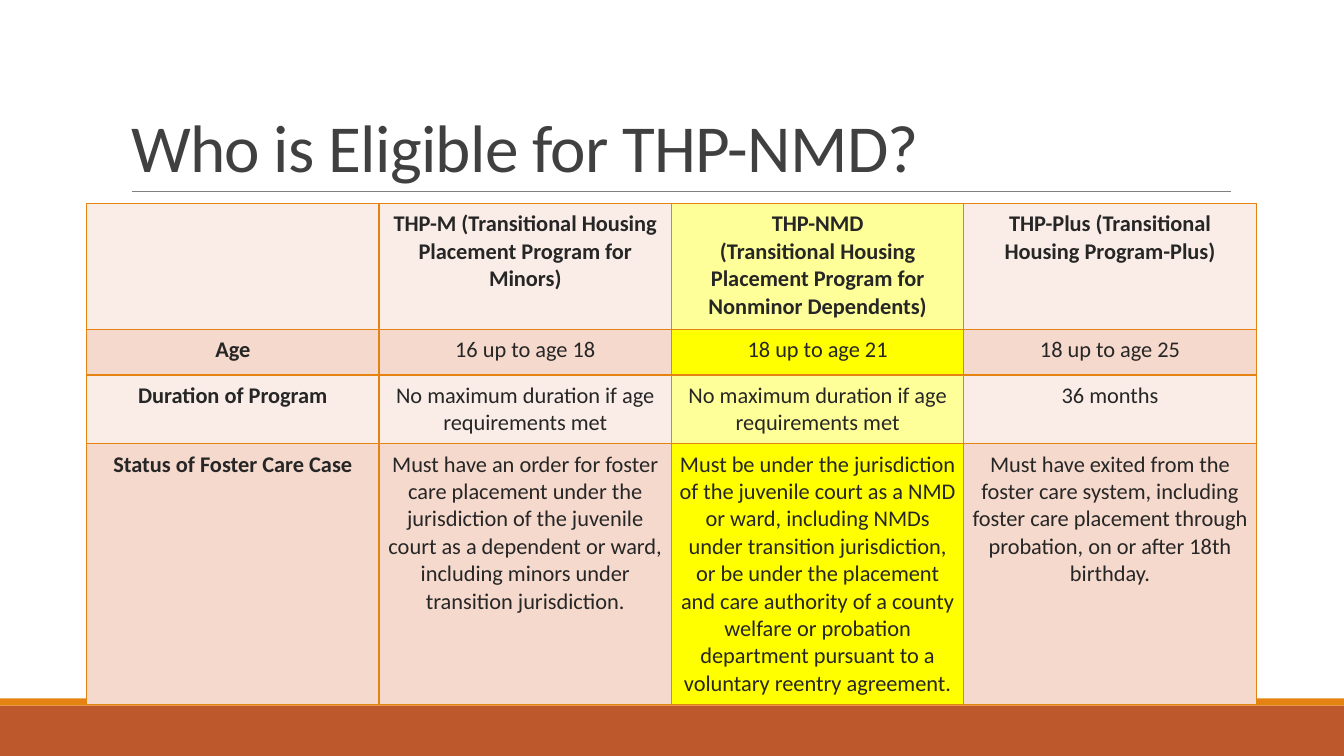
from pptx import Presentation
from pptx.dml.color import RGBColor
from pptx.enum.shapes import MSO_CONNECTOR as Conn, MSO_SHAPE as Shape
from pptx.enum.text import MSO_ANCHOR as Anchor, MSO_AUTO_SIZE as AutoSize, PP_ALIGN as Align
from pptx.oxml.ns import qn
from pptx.util import Emu, Pt
from lxml.etree import SubElement

COLORS = {
    "title": "404040", "text": "262626", "rule": "808080",
    "orange": "E48312", "rust": "BD582C",
    "pale": "FAEDE7", "peach": "F5D9CC",
    "pale_yellow": "FFFF99", "yellow": "FFFF00",
}
PX = 9144  # 100 px to the inch

ROWS = [
    ["", "THP-M (Transitional Housing Placement Program for Minors)",
     "THP-NMD\n(Transitional Housing Placement Program for Nonminor Dependents)",
     "THP-Plus (Transitional Housing Program-Plus)"],
    ["Age", "16 up to age 18", "18 up to age 21", "18 up to age 25"],
    ["Duration of Program", "No maximum duration if age requirements met",
     "No maximum duration if age requirements met", "36 months"],
    ["Status of Foster Care Case",
     "Must have an order for foster care placement under the jurisdiction of the juvenile "
     "court as a dependent or ward, including minors under transition jurisdiction.",
     "Must be under the jurisdiction of the juvenile court as a NMD or ward, including NMDs "
     "under transition jurisdiction, or be under the placement and care authority of a county "
     "welfare or probation department pursuant to a voluntary reentry agreement.",
     "Must have exited from the foster care system, including foster care placement through "
     "probation, on or after 18th birthday."],
]
ROW_HEIGHTS = [125, 45, 66, 246]
COLUMN_WIDTH = 290
FOCUS_COLUMN = 2


def rgb(name):
    return RGBColor.from_string(COLORS[name])


def apply(target, values):
    for name, value in values.items():
        setattr(target, name, value)


class Deck:
    font = "Calibri"

    def __init__(self, width, height):
        self.prs = Presentation()
        apply(self.prs, {"slide_width": Emu(width * PX), "slide_height": Emu(height * PX)})
        self.s = None

    def add_slide(self):
        self.s = self.prs.slides.add_slide(self.prs.slide_layouts[5])

    def style(self, font, size, color, bold=False):
        apply(font, {"name": self.font, "size": Pt(size), "bold": bold})
        font.color.rgb = rgb(color)

    def title(self, text, *box):
        sp = self.s.shapes.title
        apply(sp, dict(zip(("left", "top", "width", "height"), (Emu(v * PX) for v in box))))
        tf = sp.text_frame
        apply(tf, {"text": text, "word_wrap": True, "auto_size": AutoSize.NONE,
                   "vertical_anchor": Anchor.BOTTOM})
        p = tf.paragraphs[0]
        apply(p, {"alignment": Align.LEFT, "line_spacing": 0.85})
        r = p.runs[0]
        self.style(r.font, 48, "title")
        r.font._element.set("spc", "-50")

    def bar(self, color, *box):
        sp = self.s.shapes.add_shape(Shape.RECTANGLE, *(Emu(v * PX) for v in box))
        sp.shadow.inherit = False
        sp.fill.solid()
        sp.fill.fore_color.rgb = rgb(color)
        sp.line.fill.background()

    def rule(self, color, width, *ends):
        line = self.s.shapes.add_connector(Conn.STRAIGHT, *(Emu(v * PX) for v in ends))
        line.line.color.rgb = rgb(color)
        line.line.width = Pt(width)
        SubElement(line._element.spPr, qn("a:effectLst"))

    def borders(self, cell, color, width):
        tc_pr = cell._tc.get_or_add_tcPr()
        for index, side in enumerate(("lnL", "lnR", "lnT", "lnB")):
            ln = tc_pr.makeelement(qn(f"a:{side}"), {"w": str(Pt(width))})
            fill = SubElement(ln, qn("a:solidFill"))
            SubElement(fill, qn("a:srgbClr"), val=COLORS[color])
            tc_pr.insert(index, ln)

    def cell(self, cell, text, fill, bold):
        margins = ("margin_left", "margin_right", "margin_top", "margin_bottom")
        apply(cell, dict.fromkeys(margins, Emu(7 * PX)))
        cell.text = text
        for p in cell.text_frame.paragraphs:
            p.alignment = Align.CENTER
            self.style(p.font, 16, "text", bold)
            for r in p.runs:
                self.style(r.font, 16, "text", bold)
        cell.fill.solid()
        cell.fill.fore_color.rgb = rgb(fill)
        self.borders(cell, "orange", 1)

    def table(self, left, top, rows, heights, column_width, focus):
        count = len(rows[0])
        box = (left, top, column_width * count, sum(heights))
        table = self.s.shapes.add_table(len(rows), count, *(Emu(v * PX) for v in box)).table
        apply(table, {"first_row": False, "horz_banding": False})
        for column in table.columns:
            column.width = Emu(column_width * PX)
        for i, (row, height) in enumerate(zip(rows, heights)):
            table.rows[i].height = Emu(height * PX)
            plain, marked = (("pale", "pale_yellow"), ("peach", "yellow"))[i % 2]
            for j, text in enumerate(row):
                self.cell(table.cell(i, j), text, marked if j == focus else plain,
                          bold=i == 0 or j == 0)


def main():
    deck = Deck(1333, 750)
    deck.add_slide()

    # Footer bars and title rule
    deck.bar("rust", 0, 700, 1333, 50)
    deck.bar("orange", 0, 693, 1333, 7)
    deck.rule("rule", 0.5, 131, 190, 1221, 190)

    # Title
    deck.title("Who is Eligible for THP-NMD?", 120, 31, 1100, 159)

    # Eligibility table
    deck.table(86, 202, ROWS, ROW_HEIGHTS, COLUMN_WIDTH, FOCUS_COLUMN)

    deck.prs.save("out.pptx")


if __name__ == "__main__":
    main()
